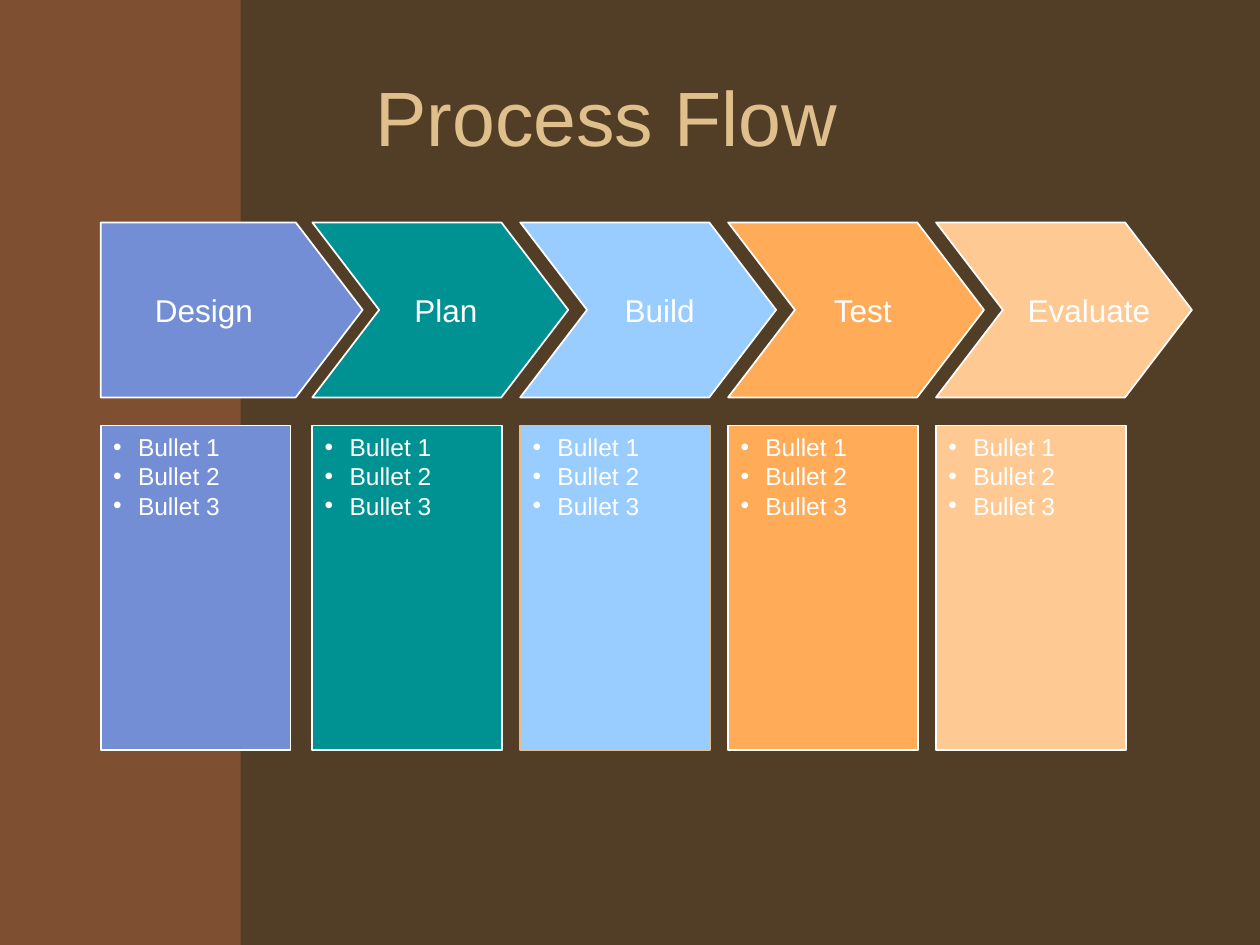
from lxml.etree import SubElement
from pptx import Presentation
from pptx.dml.color import RGBColor
from pptx.enum.shapes import MSO_SHAPE as Shape
from pptx.enum.text import MSO_ANCHOR as Anchor, MSO_AUTO_SIZE as AutoSize, PP_ALIGN as Align
from pptx.oxml.ns import qn
from pptx.util import Pt

TITLE = "Process Flow"
BULLETS = ["Bullet 1", "Bullet 2", "Bullet 3"]
# name, fill, panel border, label left, label width
STEPS = [
    ("Design", "748ED6", "FFFFFF", 81.4, 72),
    ("Plan", "009193", "FFFFFF", 229.7, 52),
    ("Build", "99CCFF", "DFC08D", 349.9, 56),
    ("Test", "FFAB57", "FFFFFF", 469.4, 51),
    ("Evaluate", "FFC993", "FFFFFF", 580.1, 87),
]
THEME = {
    "font": "Arial", "background": "523E26", "stripe": "7F4F31",
    "title": "DFC08D", "text": "FFFFFF",
    "title_size": 44, "label_size": 18, "bullet_size": 14, "line": 1,
}
FIRST_LEFT, SECOND_LEFT, STEP_PITCH = 57.6, 178.5, 118.8
ARROW_TOP, ARROW_HEIGHT, ARROW_POINT = 127.1, 100, 38.2
FIRST_BODY, ARROW_BODY = 111.4, 108
PANEL_TOP, PANEL_WIDTH, PANEL_HEIGHT = 243.2, 108.5, 185.2
LABEL_TOP, LABEL_HEIGHT = 162.7, 28.8
BULLET_INDENT = 14.2


def color(name):
    return RGBColor.from_string(THEME.get(name, name))


def set_all(target, values):
    for name, value in values.items():
        setattr(target, name, value)


def write(para, text, size, ink="text"):
    span = para.add_run()
    span.text = text
    set_all(span.font, {"name": THEME["font"], "size": Pt(THEME[size])})
    span.font.color.rgb = color(ink)


def add_box(page, kind, left, top, width, height, fill, border=None):
    box = page.shapes.add_shape(kind, Pt(left), Pt(top), Pt(width), Pt(height))
    box.shadow.inherit = False
    box.fill.solid()
    box.fill.fore_color.rgb = color(fill)
    if border:
        box.line.color.rgb = color(border)
        box.line.width = Pt(THEME["line"])
    else:
        box.line.fill.background()
    return box


def add_bullets(box):
    frame = box.text_frame
    set_all(frame, {"vertical_anchor": Anchor.TOP, "word_wrap": True})
    for index, text in enumerate(BULLETS):
        para = frame.add_paragraph() if index else frame.paragraphs[0]
        para.alignment = Align.LEFT
        props = para._p.get_or_add_pPr()
        props.set("marL", str(Pt(BULLET_INDENT)))
        props.set("indent", str(-Pt(BULLET_INDENT)))
        SubElement(props, qn("a:buFont"), typeface=THEME["font"])
        SubElement(props, qn("a:buChar"), char="•")
        write(para, text, "bullet_size")


def add_arrow(page, left, is_first, fill):
    kind, body = (Shape.PENTAGON, FIRST_BODY) if is_first else (Shape.CHEVRON, ARROW_BODY)
    arrow = add_box(page, kind, left, ARROW_TOP, body + ARROW_POINT, ARROW_HEIGHT, fill, "text")
    arrow.adjustments[0] = ARROW_POINT / ARROW_HEIGHT


def add_label(page, text, left, width):
    box = page.shapes.add_textbox(Pt(left), Pt(LABEL_TOP), Pt(width), Pt(LABEL_HEIGHT))
    set_all(box.text_frame, {"word_wrap": False, "auto_size": AutoSize.SHAPE_TO_FIT_TEXT})
    write(box.text_frame.paragraphs[0], text, "label_size")


def add_title(page):
    title = page.shapes.title
    set_all(title, {"left": Pt(81.4), "top": Pt(21.2), "width": Pt(530.6), "height": Pt(90)})
    title.text_frame.vertical_anchor = Anchor.MIDDLE
    para = title.text_frame.paragraphs[0]
    para.alignment = Align.CENTER
    write(para, TITLE, "title_size", "title")


def main():
    deck = Presentation()
    set_all(deck, {"slide_width": Pt(720), "slide_height": Pt(540)})
    page = deck.slides.add_slide(deck.slide_layouts[5])
    page.background.fill.solid()
    page.background.fill.fore_color.rgb = color("background")

    stripe = add_box(page, Shape.RECTANGLE, 0, 0, 137.5, 540, "stripe")
    page.shapes.title._element.addprevious(stripe._element)
    add_title(page)

    lefts = [FIRST_LEFT] + [SECOND_LEFT + i * STEP_PITCH for i in range(len(STEPS) - 1)]
    for left, (name, fill, border, label_left, label_width) in zip(lefts, STEPS):
        panel = add_box(page, Shape.RECTANGLE, left, PANEL_TOP, PANEL_WIDTH, PANEL_HEIGHT, fill, border)
        add_bullets(panel)
        add_arrow(page, left, left == FIRST_LEFT, fill)
        add_label(page, name, label_left, label_width)

    deck.save("out.pptx")


if __name__ == "__main__":
    main()
